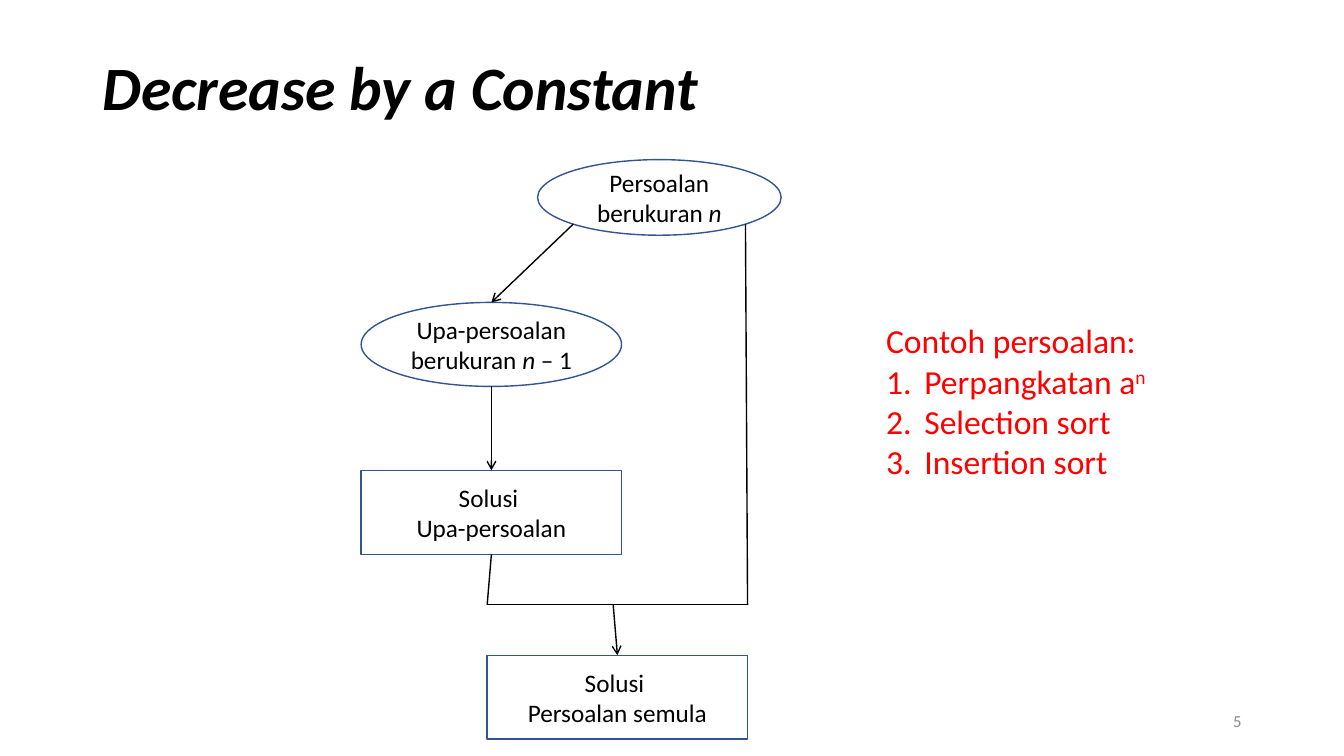
import pptx
import pptx.dml.color
import pptx.enum.shapes
import pptx.enum.text
import pptx.oxml.ns
import pptx.util
from lxml import etree

RGBColor = pptx.dml.color.RGBColor
BLACK = RGBColor(0x00, 0x00, 0x00)
BLUE = RGBColor(0x32, 0x54, 0x91)
RED = RGBColor(0xFF, 0x00, 0x00)
GREY = RGBColor(0x8C, 0x8C, 0x8C)

ALIGN = pptx.enum.text.PP_ALIGN
ANCHOR = pptx.enum.text.MSO_ANCHOR
SHAPES = pptx.enum.shapes.MSO_SHAPE
TOP, BOTTOM = 0, 2
COLUMNS, ROWS = 160, 90


def add_element(parent, tag, **attributes):
    return etree.SubElement(parent, pptx.oxml.ns.qn(tag), attributes)


def write(paragraph, text, size=18, color=BLACK, bold=False, italic=False, superscript=False):
    run = paragraph.add_run()
    run.text = text
    font = run.font
    font.name = "Calibri"
    font.size = pptx.util.Pt(size)
    font.color.rgb = color
    font.bold = bold
    font.italic = italic
    if superscript:
        run._r.get_or_add_rPr().set("baseline", "30000")


class Diagram:
    """Places elements on a grid of COLUMNS by ROWS cells."""

    def __init__(self, presentation):
        self.slide = presentation.slides.add_slide(presentation.slide_layouts[6])
        self.cell_width = presentation.slide_width / COLUMNS
        self.cell_height = presentation.slide_height / ROWS

    def place(self, column, row):
        return round(column * self.cell_width), round(row * self.cell_height)

    def fill_text(self, frame, lines, align, anchor, **style):
        """Each line is a list of (text, format) pairs."""
        frame.word_wrap = True
        frame.vertical_anchor = anchor
        for index, line in enumerate(lines):
            paragraph = frame.add_paragraph() if index else frame.paragraphs[0]
            paragraph.alignment = align
            for text, extra in line:
                write(paragraph, text, **{**style, **extra})

    def text(self, cell, span, lines, align=ALIGN.LEFT, anchor=ANCHOR.MIDDLE, **style):
        box = self.slide.shapes.add_textbox(*self.place(*cell), *self.place(*span))
        self.fill_text(box.text_frame, lines, align, anchor, **style)
        return box.text_frame

    def node(self, kind, cell, span, lines):
        shape = self.slide.shapes.add_shape(kind, *self.place(*cell), *self.place(*span))
        shape.shadow.inherit = False
        shape.fill.background()
        shape.line.color.rgb = BLUE
        shape.line.width = pptx.util.Pt(1)
        self.fill_text(shape.text_frame, lines, ALIGN.CENTER, ANCHOR.MIDDLE)
        return shape

    def line(self, start, end, source=None, target=None, arrow=False):
        """Joins the bottom of source to the top of target where they are given."""
        connector = self.slide.shapes.add_connector(
            pptx.enum.shapes.MSO_CONNECTOR.STRAIGHT, *self.place(*start), *self.place(*end))
        if source is not None:
            connector.begin_connect(source, BOTTOM)
        if target is not None:
            connector.end_connect(target, TOP)
        connector.line.color.rgb = BLACK
        connector.line.width = pptx.util.Pt(1)
        if arrow:
            add_element(connector.line._get_or_add_ln(), "a:tailEnd", type="arrow")
        add_element(connector._element.spPr, "a:effectLst")


def number_paragraph(paragraph):
    indent = pptx.util.Inches(0.38)
    properties = paragraph._p.get_or_add_pPr()
    properties.set("marL", str(indent))
    properties.set("indent", str(-indent))
    add_element(properties, "a:buFont", typeface="+mj-lt")
    add_element(properties, "a:buAutoNum", type="arabicPeriod")


def main():
    presentation = pptx.Presentation()
    presentation.slide_width = pptx.util.Inches(13.333)
    presentation.slide_height = pptx.util.Inches(7.5)
    diagram = Diagram(presentation)

    title = diagram.text((11, 4.8), (138, 11.9), [[("Decrease by a Constant", {})]],
                         size=44, bold=True, italic=True)
    title.paragraphs[0].line_spacing = 0.9

    size_n = ("n", {"italic": True})
    span = (31, 10)
    problem = diagram.node(SHAPES.OVAL, (64, 19), (29, 9),
                           [[("Persoalan berukuran ", {}), size_n]])
    subproblem = diagram.node(SHAPES.OVAL, (43, 36), span,
                              [[("Upa-persoalan berukuran ", {}), size_n, (" – 1 ", {})]])
    subsolution = diagram.node(SHAPES.RECTANGLE, (43, 56), span,
                               [[("Solusi ", {})], [("Upa-persoalan", {})]])
    solution = diagram.node(SHAPES.RECTANGLE, (58, 78), span,
                            [[("Solusi ", {})], [("Persoalan semula", {})]])

    merge_left, merge_middle, merge_right = (58, 72), (73, 72), (89, 72)
    diagram.line((68.25, 26.68), (58.5, 36), target=subproblem, arrow=True)
    diagram.line((58.5, 46), (58.5, 56), source=subproblem, target=subsolution, arrow=True)
    diagram.line((58.5, 66), merge_left, source=subsolution)
    diagram.line(merge_left, merge_right)
    diagram.line(merge_right, (88.75, 26.68))
    diagram.line(merge_middle, (73.5, 78), target=solution, arrow=True)

    diagram.text((113, 83.4), (36, 4.8), [[("5", {})]], align=ALIGN.RIGHT, size=12, color=GREY)

    examples = diagram.text((104.3, 37.55), (37.8, 20.6), [
        [("Contoh persoalan:", {})],
        [("Perpangkatan a", {}), ("n", {"superscript": True})],
        [("Selection sort", {})],
        [("Insertion sort", {})],
    ], anchor=ANCHOR.TOP, size=24, color=RED)
    examples.auto_size = pptx.enum.text.MSO_AUTO_SIZE.SHAPE_TO_FIT_TEXT
    for paragraph in examples.paragraphs[1:]:
        number_paragraph(paragraph)

    presentation.save("out.pptx")


if __name__ == "__main__":
    main()
